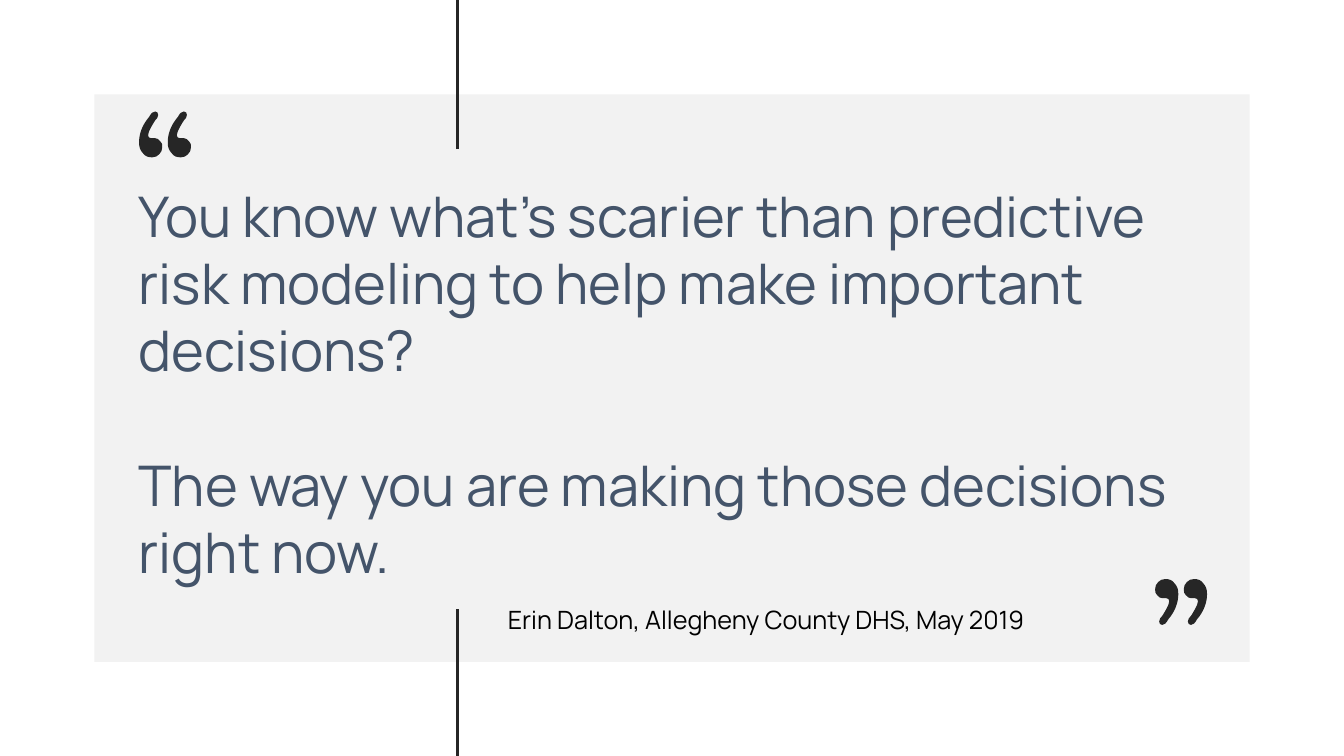
"""Build a quotation slide with a grey panel, quote marks and a split rule."""
from lxml import etree
from pptx import Presentation
from pptx.dml.color import RGBColor
from pptx.enum.shapes import MSO_CONNECTOR, MSO_SHAPE
from pptx.enum.text import MSO_AUTO_SIZE
from pptx.oxml.ns import qn
from pptx.util import Inches, Pt

LINE = MSO_CONNECTOR.STRAIGHT
RECTANGLE = MSO_SHAPE.RECTANGLE
GROW = MSO_AUTO_SIZE.SHAPE_TO_FIT_TEXT
PANEL_GREY = RGBColor(0xF2, 0xF2, 0xF2)
SLATE = RGBColor(0x44, 0x54, 0x6A)
CHARCOAL = RGBColor(0x26, 0x26, 0x26)
BLACK = RGBColor(0, 0, 0)
FONT = "Manrope"

deck = Presentation()
deck.slide_width, deck.slide_height = Inches(13.333), Inches(7.5)
slide = deck.slides.add_slide(deck.slide_layouts[6])
shapes = slide.shapes


def place(*percents):
    """Turn alternating width and height percentages into lengths."""
    sides = (deck.slide_width, deck.slide_height) * 2
    return [int(side * percent / 100) for side, percent in zip(sides, percents)]


def add_words(paragraph, words, size, color):
    """Add one styled run to a paragraph."""
    run = paragraph.add_run()
    run.text = words
    run.font.name, run.font.size = FONT, Pt(size)
    run.font.color.rgb = color


panel = shapes.add_shape(RECTANGLE, *place(7.03, 12.5, 85.96, 75.05))
panel.shadow.inherit = False
panel.fill.solid()
panel.fill.fore_color.rgb = PANEL_GREY
panel.line.fill.background()

quote = shapes.add_textbox(*place(10.32, 24, 79.2, 53.87)).text_frame
quote.word_wrap = True
quote.auto_size = GROW
quote.margin_left = quote.margin_top = quote.margin_right = quote.margin_bottom = 0
add_words(quote.paragraphs[0],
          "You know what’s scarier than predictive risk modeling to help make important decisions?",
          40, SLATE)
answer = quote.add_paragraph()
answer.space_before = Pt(48)
add_words(answer, "The way you are making those decisions right now.", 40, SLATE)

for rule_start, rule_end in ((19.73, 0), (100, 80.53)):
    rule = shapes.add_connector(LINE, *place(34.05, rule_start, 34.05, rule_end))
    rule.line.color.rgb = CHARCOAL
    rule.line.width = Pt(2.5)
    etree.SubElement(rule._element.spPr, qn("a:effectLst"))

COMMA_START = (28, 44)
COMMA_CURVES = [
    ((28, 40), (26, 38), (22, 38)), ((14, 38), (14, 38), (14, 38)),
    ((10, 38), (8, 36), (4, 32)), ((0, 30), (0, 24), (0, 20)),
    ((0, 14), (2, 10), (6, 6)), ((10, 2), (14, 0), (20, 0)),
    ((28, 0), (34, 2), (38, 8)), ((44, 14), (46, 20), (46, 30)),
    ((46, 46), (40, 64), (26, 80)), ((22, 88), (18, 91), (14, 91)),
    ((10, 91), (8, 88), (8, 84)), ((8, 82), (8, 80), (10, 78)),
    ((16, 72), (18, 66), (22, 60)), ((26, 52), (28, 48), (28, 44)),
]
UNIT = Inches(0.005)
COMMA_GAP, MARK_WIDTH, MARK_HEIGHT = 57, 103, 91

for mark_left, mark_top, turned in ((85.95, 76.6, False), (10.35, 14.75, True)):
    builder = shapes.build_freeform(0, 0, scale=UNIT)
    builder.add_line_segments([(MARK_WIDTH, 0), (MARK_WIDTH, MARK_HEIGHT)])
    mark = builder.convert_to_shape(*place(mark_left, mark_top))
    outline = next(mark._element.iter(qn("a:path")))
    for segment in list(outline):
        outline.remove(segment)
    for shift in (0, COMMA_GAP):
        for tag, points in [("a:moveTo", [COMMA_START])] + [
                ("a:cubicBezTo", curve) for curve in COMMA_CURVES]:
            segment = etree.SubElement(outline, qn(tag))
            for x, y in points:
                x += shift
                if turned:
                    x, y = MARK_WIDTH - x, MARK_HEIGHT - y
                etree.SubElement(segment, qn("a:pt"), x=str(x), y=str(y))
        etree.SubElement(outline, qn("a:close"))
    mark.shadow.inherit = False
    mark.fill.solid()
    mark.fill.fore_color.rgb = CHARCOAL
    mark.line.fill.background()

speaker = shapes.add_textbox(*place(37.05, 79.73, 45.68, 5.07)).text_frame
speaker.word_wrap = True
speaker.paragraphs[0].line_spacing = 0.9
add_words(speaker.paragraphs[0], "Erin Dalton, Allegheny County DHS, May 2019", 18, BLACK)

deck.save("out.pptx")
